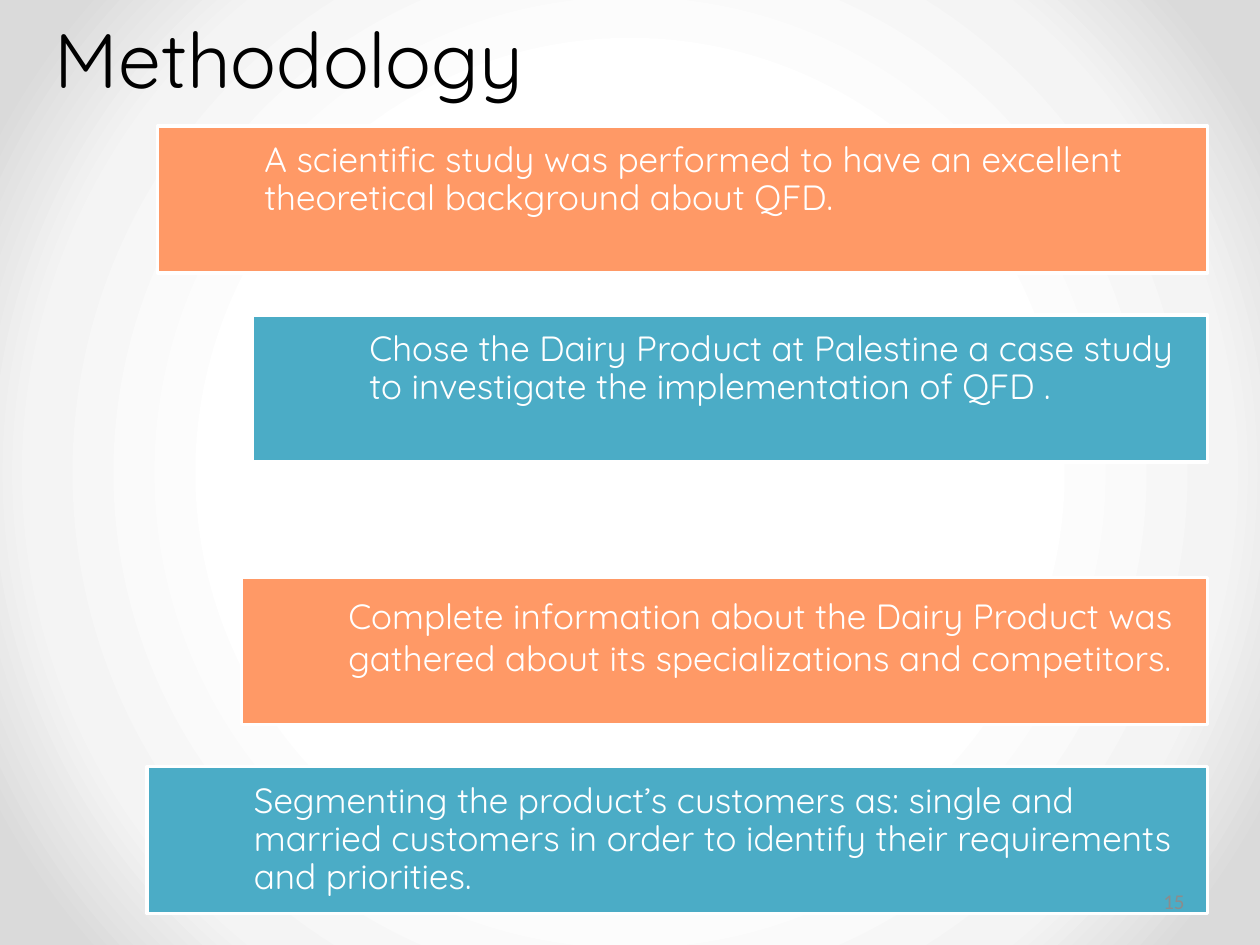
from pptx import Presentation
from pptx.dml.color import RGBColor
from pptx.enum.shapes import MSO_SHAPE
from pptx.enum.text import MSO_ANCHOR, MSO_AUTO_SIZE, PP_ALIGN
from pptx.oxml import parse_xml
from pptx.oxml.ns import nsdecls, qn
from pptx.util import Inches, Pt

RECTANGLE = MSO_SHAPE.RECTANGLE
MIDDLE = MSO_ANCHOR.MIDDLE
GROW = MSO_AUTO_SIZE.SHAPE_TO_FIT_TEXT
LEFT, RIGHT = PP_ALIGN.LEFT, PP_ALIGN.RIGHT

THEME = {
    "orange": "FF9966", "teal": "4BACC6", "white": "FFFFFF",
    "black": "000000", "grey": "8C8C8C",
    "background": [(50, "FFFFFF"), (76, "F4F4F4"), (92, "DADADA")],
    "font": "Quicksand", "number_font": "Calibri",
    "title_size": 44, "body_size": 20, "number_size": 12,
}

# Grid of 120 columns by 90 rows
deck = Presentation()
deck.slide_width, deck.slide_height = Inches(10), Inches(7.5)
COLUMN, ROW = deck.slide_width / 120, deck.slide_height / 90
page = deck.slides.add_slide(deck.slide_layouts[5])


def cells(left, top, width, height):
    """Turn columns and rows into lengths."""
    return (round(left * COLUMN), round(top * ROW),
            round(width * COLUMN), round(height * ROW))


def write(box, text, size, color, font=THEME["font"], align=LEFT):
    """Put one formatted run in the box and return its paragraph."""
    box.text_frame.word_wrap = True
    para = box.text_frame.paragraphs[0]
    para.alignment = align
    span = para.add_run()
    span.text = text
    span.font.name, span.font.size = font, Pt(size)
    span.font.color.rgb = RGBColor.from_string(color)
    return para


# Background: circular gradient from the centre
page.background.fill.gradient()
gradient = next(page.background._cSld.iter(qn("a:gradFill")))
stops = "".join(
    f'<a:gs pos="{share * 1000}"><a:srgbClr val="{color}"/></a:gs>'
    for share, color in THEME["background"])
gradient.getparent().replace(gradient, parse_xml(
    f'<a:gradFill {nsdecls("a")} rotWithShape="1"><a:gsLst>{stops}</a:gsLst>'
    '<a:path path="circle"><a:fillToRect l="50000" t="50000" r="50000" b="50000"/>'
    '</a:path></a:gradFill>'))

# Title
title = page.shapes.title
title.left, title.top, title.width, title.height = cells(4, -2, 108, 15)
title.text_frame.vertical_anchor = MIDDLE
write(title, "Methodology", THEME["title_size"], THEME["black"])

# Steps: bar left, bar top, colour, text cells, line spacing, wording
BAR_RIGHT, BAR_HEIGHT = 115, 14
STEPS = [
    (15, 12, "orange", (24, 13, 90, 13.9), 0.9,
     "A scientific study was performed to have an excellent "
     "theoretical background about QFD."),
    (24, 30, "teal", (34, 31, 80, 12.1), 0.9,
     "Chose the Dairy Product at Palestine a case study "
     "to investigate the implementation of QFD ."),
    (23, 55, "orange", (32, 56, 83, 13.3), 1.0,
     "Complete information about the Dairy Product was "
     "gathered about its specializations and competitors."),
    (14, 73, "teal", (23, 74, 91, 12.1), 0.9,
     "Segmenting the product’s customers as: single and married customers "
     "in order to identify their requirements and priorities."),
]

# Bars
for left, top, color, *_ in STEPS:
    bar = page.shapes.add_shape(
        RECTANGLE, *cells(left, top, BAR_RIGHT - left, BAR_HEIGHT))
    bar.shadow.inherit = False
    bar.fill.solid()
    bar.fill.fore_color.rgb = RGBColor.from_string(THEME[color])
    bar.line.color.rgb = RGBColor.from_string(THEME["white"])
    bar.line.width = Pt(2)

# Slide number
number = page.shapes.add_textbox(*cells(86, 83.4, 28, 4.8))
number.text_frame.vertical_anchor = MIDDLE
write(number, "15", THEME["number_size"], THEME["grey"],
      THEME["number_font"], RIGHT)

# Step wording
for *_, area, spacing, wording in STEPS:
    box = page.shapes.add_textbox(*cells(*area))
    box.text_frame.auto_size = GROW
    para = write(box, wording, THEME["body_size"], THEME["white"])
    para.line_spacing = spacing

deck.save("out.pptx")
